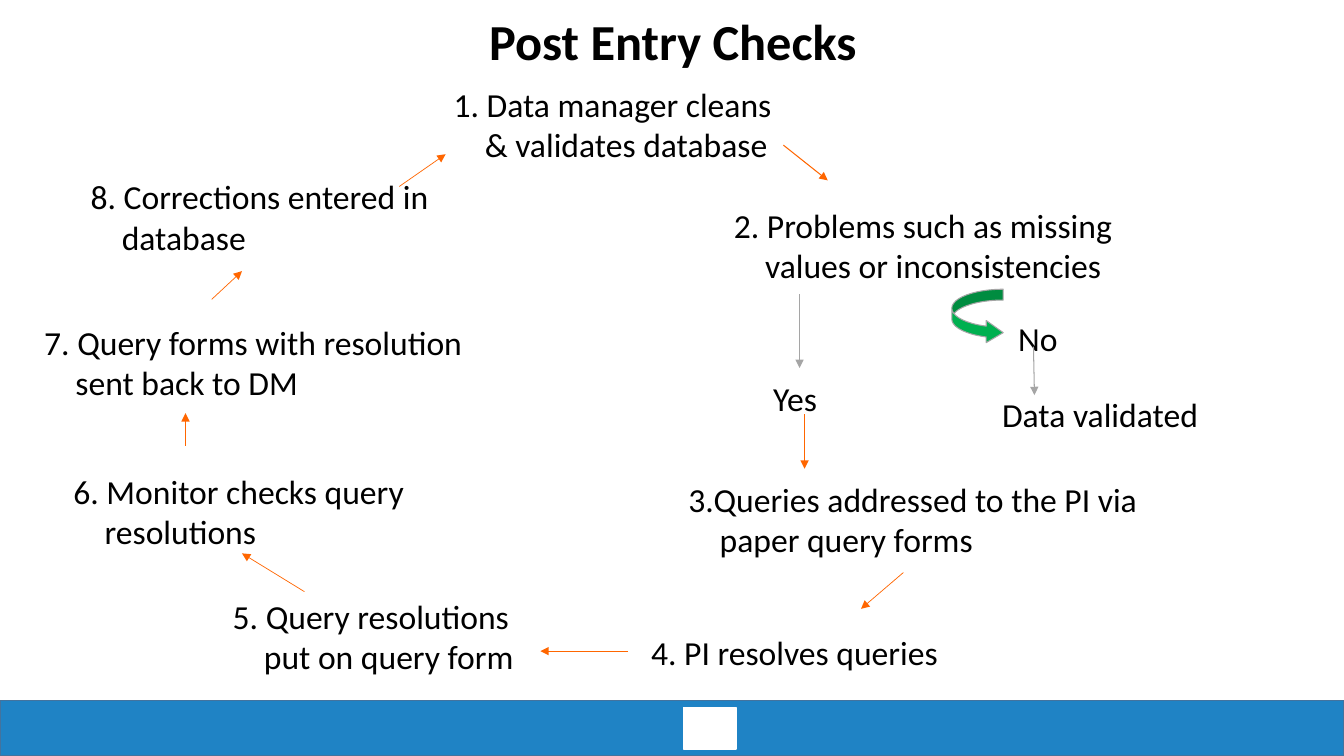
from pptx import Presentation
from pptx import util as u
from pptx.dml.color import RGBColor
from pptx.enum import shapes, text
from pptx.oxml import parse_xml
from pptx.oxml.ns import nsdecls, qn

FONT = "Calibri"
BLACK, WHITE, BLUE, NAVY = "000000", "FFFFFF", "1F83C5", "43739E"
GREEN, GREY, ORANGE = "00B050", "A5A5A5", "FF6600"
ONE_LINE, TWO_LINES = 0.5, 0.91
LEFT, RIGHT = text.PP_ALIGN.LEFT, text.PP_ALIGN.RIGHT

STEPS = [
    ("1. Data manager cleans & validates database", 3.9, 0.78, 4.08, TWO_LINES, LEFT),
    ("2. Problems such as missing values or inconsistencies", 6.68, 1.98, 4.89, TWO_LINES, LEFT),
    ("3.Queries addressed to the PI via paper query forms", 6.23, 4.7, 5.18, TWO_LINES, LEFT),
    ("4. PI resolves queries", 5.86, 6.22, 4.27, ONE_LINE, LEFT),
    ("5. Query resolutions put on query form", 1.71, 5.86, 3.56, TWO_LINES, LEFT),
    ("6. Monitor checks query resolutions", 0.13, 4.62, 4.67, TWO_LINES, LEFT),
    ("7. Query forms with resolution sent back to DM", -0.16, 3.14, 5, TWO_LINES, LEFT),
    ("8. Corrections entered in database", 0.3, 1.7, 4.2, TWO_LINES, LEFT),
    ("Data validated", 9.31, 3.86, 2.67, ONE_LINE, RIGHT),
    ("No", 9.5, 3.1, 1.38, ONE_LINE, LEFT),
    ("Yes", 7.07, 3.7, 1.33, ONE_LINE, LEFT),
]

ARROWS = [
    (10.25, 3.44, 10.26, 3.92, GREY, 0.75),
    (7.77, 1.44, 8.21, 1.79, ORANGE, 0.75),
    (7.93, 2.92, 7.93, 3.65, GREY, 0.75),
    (7.98, 4.11, 7.98, 4.65, ORANGE, 0.5),
    (8.96, 5.68, 8.54, 6.04, ORANGE, 0.5),
    (6.23, 6.46, 5.36, 6.46, ORANGE, 0.5),
    (3.02, 5.87, 2.4, 5.49, ORANGE, 0.5),
    (1.84, 4.42, 1.84, 4.1, ORANGE, 0.5),
    (2.1, 2.97, 2.4, 2.69, ORANGE, 0.5),
    (3.96, 1.85, 4.42, 1.53, ORANGE, 0.5),
]


def inches(*lengths):
    return [u.Inches(length) for length in lengths]


def colour(target, value):
    target.rgb = RGBColor.from_string(value)


def apply(target, formats):
    for name, value in formats.items():
        setattr(target, name, value)


def style_font(font, size, bold=False):
    apply(font, {"name": FONT, "size": u.Pt(size), "bold": bold})
    colour(font.color, BLACK)


def add_title(page, words, left, top, width, height):
    title = page.shapes.title
    places = inches(left, top, width, height)
    apply(title, dict(zip(("left", "top", "width", "height"), places)))
    frame = title.text_frame
    frame.text = words
    apply(frame, {"vertical_anchor": text.MSO_ANCHOR.MIDDLE, "word_wrap": True})
    para = frame.paragraphs[0]
    apply(para, {"alignment": text.PP_ALIGN.CENTER, "line_spacing": 0.9})
    style_font(para.runs[0].font, 36, True)


def add_step(page, words, left, top, width, height, alignment):
    box = page.shapes.add_textbox(*inches(left, top, width, height))
    apply(box.text_frame, {"word_wrap": True, "auto_size": text.MSO_AUTO_SIZE.SHAPE_TO_FIT_TEXT})
    para = box.text_frame.paragraphs[0]
    para.alignment = alignment
    properties = para._p.get_or_add_pPr()
    properties.set("marL", str(u.Inches(0.81)))
    properties.set("indent", str(u.Inches(-0.31)))
    span = para.add_run()
    span.text = words
    style_font(span.font, 24)


def add_preset(page, preset, left, top, width, height, fill, line, weight):
    shape = page.shapes.add_shape(preset, *inches(left, top, width, height))
    shape.shadow.inherit = False
    shape.fill.solid()
    colour(shape.fill.fore_color, fill)
    colour(shape.line.color, line)
    shape.line.width = u.Pt(weight)
    return shape


def add_arrow(page, x1, y1, x2, y2, line, weight):
    arrow = page.shapes.add_connector(shapes.MSO_CONNECTOR.STRAIGHT, *inches(x1, y1, x2, y2))
    colour(arrow.line.color, line)
    arrow.line.width = u.Pt(weight)
    properties = arrow._element.spPr
    properties.find(qn("a:ln")).append(parse_xml(f'<a:tailEnd {nsdecls("a")} type="triangle"/>'))
    properties.append(parse_xml(f'<a:effectLst {nsdecls("a")}/>'))


def main():
    deck = Presentation()
    deck.slide_width, deck.slide_height = inches(13.33, 7.5)
    page = deck.slides.add_slide(deck.slide_layouts.get_by_name("Title Only"))
    rectangle = shapes.MSO_SHAPE.RECTANGLE
    add_preset(page, rectangle, 0, 6.95, 13.33, 0.55, BLUE, NAVY, 1)
    add_preset(page, rectangle, 6.78, 7.02, 0.52, 0.41, WHITE, WHITE, 1)
    add_title(page, "Post Entry Checks", 0.01, 0.05, 13.33, 0.78)
    for step in STEPS:
        add_step(page, *step)
    turn = add_preset(page, shapes.MSO_SHAPE.CURVED_RIGHT_ARROW,
                      9.44, 2.87, 0.51, 0.54, GREEN, GREY, 0.75)
    for index, value in enumerate((0.21, 0.43, 0.33)):
        turn.adjustments[index] = value
    for arrow in ARROWS:
        add_arrow(page, *arrow)
    deck.save("out.pptx")


if __name__ == "__main__":
    main()
